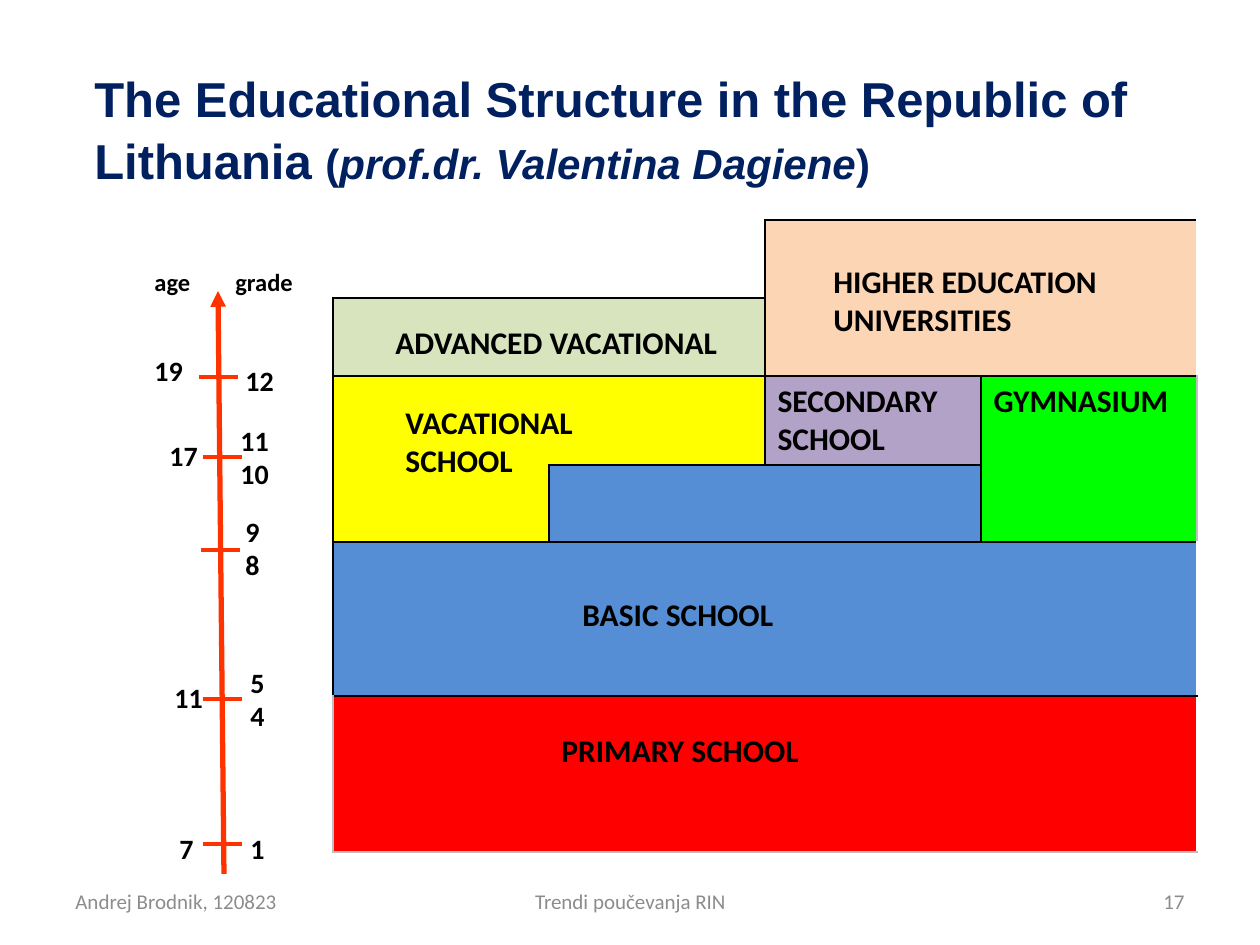
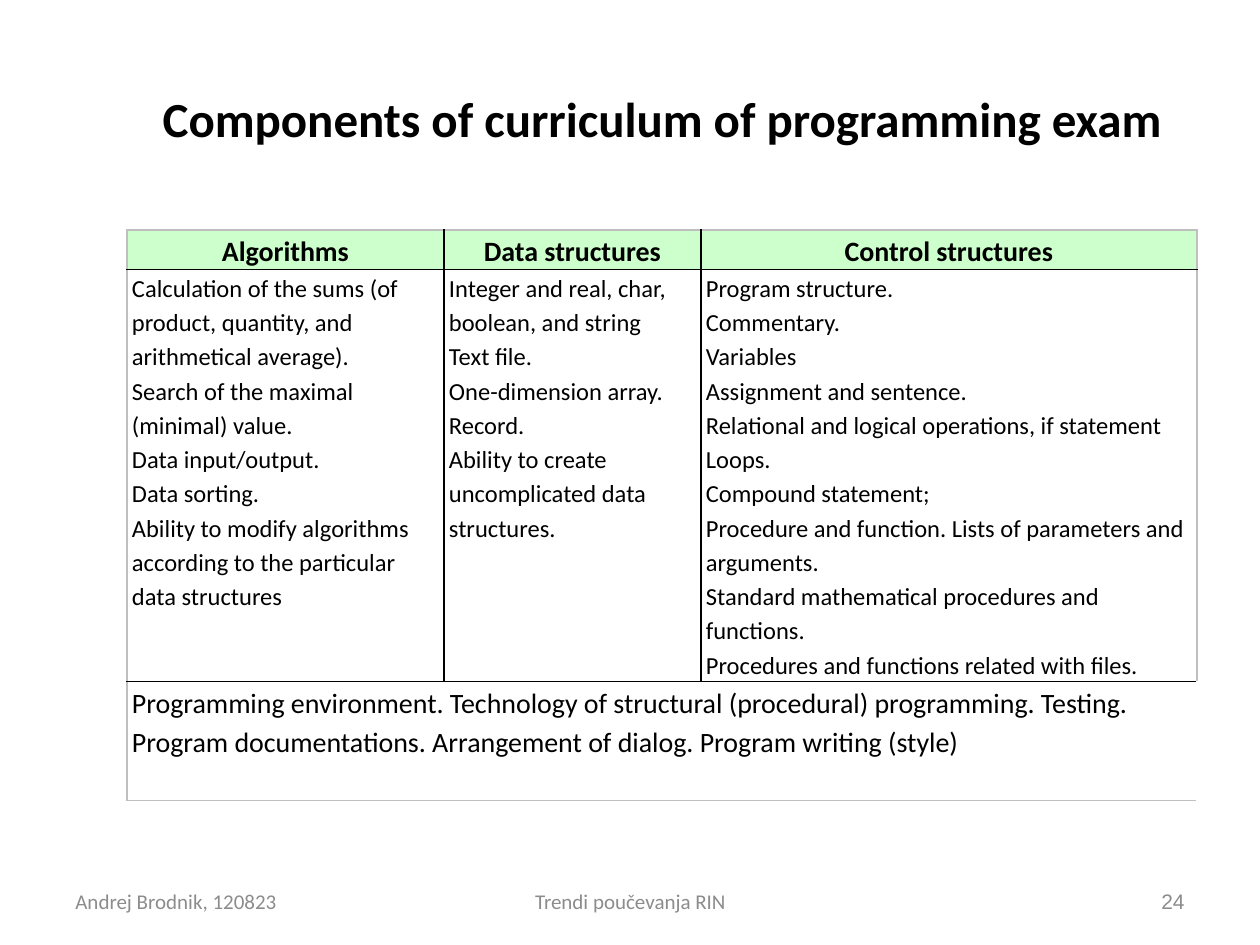
from lxml import etree
from pptx import Presentation
from pptx.dml import color
from pptx.enum import shapes, text
from pptx.oxml import ns
from pptx.util import Emu, Pt

BLACK, NAVY, GREY, EDGE = "000000", "002060", "8C8C8C", "BFBFBF"
AXIS, BLUE, MINT = "FF3300", "558ED5", "CCFFCC"
FONT = "Calibri"
LEFT, MID, RIGHT = text.PP_ALIGN.LEFT, text.PP_ALIGN.CENTER, text.PP_ALIGN.RIGHT
TOP, CENTRE = text.MSO_ANCHOR.TOP, text.MSO_ANCHOR.MIDDLE


def px(count):
    return Emu(round(count * 914400 / 126))


def rgb(code):
    return color.RGBColor.from_string(code)


def style(run, size, bold=False, ink=BLACK, font=FONT, slant=False):
    run.font.size, run.font.name = Pt(size), font
    run.font.bold, run.font.italic = bold, slant
    run.font.color.rgb = rgb(ink)


def write(frame, lines, size, align=LEFT, space=None, **look):
    frame.text = "\n".join(lines)
    for para in frame.paragraphs:
        para.alignment = align
        para.line_spacing = space
        for run in para.runs:
            style(run, size, **look)


def label(slide, box, lines, size, wrap=True, anchor=TOP, **look):
    frame = slide.shapes.add_textbox(*map(px, box)).text_frame
    frame.word_wrap = wrap
    frame.vertical_anchor = anchor
    write(frame, lines, size, **look)
    return frame


def line(slide, start, end, width, arrow=False):
    link = slide.shapes.add_connector(
        shapes.MSO_CONNECTOR.STRAIGHT, *map(px, start + end))
    link.line.color.rgb = rgb(AXIS)
    link.line.width = Pt(width)
    if arrow:
        etree.SubElement(link.line._get_or_add_ln(), ns.qn("a:tailEnd"),
                         type="triangle")
    etree.SubElement(link._element.spPr, ns.qn("a:effectLst"))


def border(cell, sides):
    """Draw the sides (L, R, T, B mapped to a colour, or None for no line)."""
    props = cell._tc.get_or_add_tcPr()
    for spot, side in enumerate(s for s in "LRTB" if s in sides):
        edge = etree.Element(ns.qn(f"a:ln{side}"), w=str(Pt(1)))
        if sides[side]:
            fill = etree.SubElement(edge, ns.qn("a:solidFill"))
            etree.SubElement(fill, ns.qn("a:srgbClr"), val=sides[side])
        else:
            etree.SubElement(edge, ns.qn("a:noFill"))
        props.insert(spot, edge)


def grid(slide, spot, cols, rows):
    box = (*spot, sum(cols), sum(rows))
    table = slide.shapes.add_table(
        len(rows), len(cols), *map(px, box)).table
    table.first_row = table.horz_banding = False
    for col, width in zip(table.columns, cols):
        col.width = px(width)
    for row, height in zip(table.rows, rows):
        row.height = px(height)
    return table


def block(table, row, col, high=1, wide=1, fill=None, **edges):
    """Merge an area, fill it and outline it; black unless edges says else."""
    sides = {**dict.fromkeys("LRTB", BLACK), **edges}
    last, end = row + high - 1, col + wide - 1
    first = table.cell(row, col)
    if high * wide > 1:
        first.merge(table.cell(last, end))
    for r in range(row, last + 1):
        for c in range(col, end + 1):
            cell = table.cell(r, c)
            if fill:
                cell.fill.solid()
                cell.fill.fore_color.rgb = rgb(fill)
            else:
                cell.fill.background()
            outer = {"L": c == col, "R": c == end,
                     "T": r == row, "B": r == last}
            border(cell, {s: sides[s] for s in sides if outer[s]})
    return first


def footer(slide, number, font=FONT):
    parts = ((63, 294, "Andrej Brodnik, 120823", LEFT, FONT),
             (431, 399, "Trendi poučevanja RIN", MID, FONT),
             (903, 294, number, RIGHT, font))
    for left, width, words, align, face in parts:
        label(slide, (left, 876, width, 50), [words], 12, anchor=CENTRE,
              align=align, ink=GREY, font=face)


def levels(slide):
    """Table of school levels, with the names laid over it."""
    table = grid(slide, (333, 220), [216] * 4, [78, 78, 89, 77, 154, 156])
    block(table, 0, 0, wide=2, L=None, T=None)
    block(table, 0, 2, 2, 2, "FCD5B5")
    block(table, 1, 0, wide=2, fill="D7E4BD")
    block(table, 2, 0, 2, fill="FFFF00", R=None)
    block(table, 2, 1, fill="FFFF00", L=None)
    second = block(table, 2, 2, fill="B3A2C7")
    gym = block(table, 2, 3, 2, fill="00FF00", R=EDGE)
    block(table, 3, 1, wide=2, fill=BLUE)
    block(table, 4, 0, wide=4, fill=BLUE)
    block(table, 5, 0, wide=4, fill="FF0000", L=EDGE, R=EDGE, B=EDGE)
    write(second.text_frame, ["SECONDARY SCHOOL"], 18, bold=True)
    write(gym.text_frame, ["GYMNASIUM"], 18, bold=True)
    names = (((549, 725, 432, 64), ["PRIMARY SCHOOL"]),
             ((570, 589, 475, 64), ["BASIC SCHOOL"]),
             ((393, 397, 257, 89), ["VACATIONAL SCHOOL"]),
             ((383, 317, 392, 50), ["ADVANCED VACATIONAL"]),
             ((821, 256, 300, 101), ["HIGHER EDUCATION", "UNIVERSITIES"]))
    for box, lines in names:
        label(slide, box, lines, 18, bold=True)


def scale(slide):
    """Upright arrow with ages on its left and grades on its right."""
    line(slide, (224, 874), (218, 291), 3, arrow=True)
    for left, top in ((199, 377), (203, 457), (201, 550),
                      (203, 699), (203, 844)):
        line(slide, (left, top), (left + 39, top), 2.25)
    marks = ((142, 347, ["19"]), (157, 432, ["17"]), (162, 674, ["11"]),
             (167, 825, ["7"]), (233, 357, ["12"]), (228, 417, ["11", "10"]),
             (233, 508, ["9", "8"]), (238, 659, ["5", "4"]),
             (238, 825, ["1"]))
    for left, top, lines in marks:
        wide = 57 if len(lines[0]) > 1 else 42
        label(slide, (left, top, wide, 13 + 34 * len(lines)), lines, 16,
              wrap=False, bold=True)
    for left, width, word in ((142, 68, "age"), (223, 92, "grade")):
        label(slide, (left, 261, width, 43), [word], 14, wrap=False,
              bold=True)


def schools(slide):
    look = {"bold": True, "ink": NAVY, "font": "Arial"}
    title = label(slide, (82, 60, 1115, 135),
                  ["The Educational Structure in the Republic of Lithuania "],
                  28, anchor=CENTRE, space=1.05, **look)
    for words, slant in (("(", False), ("prof.dr. Valentina Dagiene", True),
                         (")", False)):
        run = title.paragraphs[0].add_run()
        run.text = words
        style(run, 24, slant=slant, **look)
    levels(slide)
    scale(slide)
    footer(slide, "17")


TOPICS = {
    "Algorithms": [
        "Calculation of the sums (of product, quantity, and arithmetical "
        "average).",
        "Search of the maximal (minimal) value.",
        "Data input/output.",
        "Data sorting.",
        "Ability to modify algorithms according to the particular data "
        "structures"],
    "Data structures": [
        "Integer and real, char, boolean, and string",
        "Text file.",
        "One-dimension array.",
        "Record.",
        "Ability to create uncomplicated data structures."],
    "Control structures": [
        "Program structure.",
        "Commentary.",
        "Variables",
        "Assignment and sentence.",
        "Relational and logical operations, if statement",
        "Loops.",
        "Compound statement;",
        "Procedure and function. Lists of parameters and arguments.",
        "Standard mathematical procedures and functions.",
        "Procedures and functions related with files."],
}
SKILLS = ("Programming environment. Technology of structural (procedural) "
          "programming. Testing. Program documentations. Arrangement of "
          "dialog. Program writing (style)")


def fill_cell(cell, lines, size, **look):
    cell.margin_left = cell.margin_right = px(5)
    cell.margin_top = cell.margin_bottom = 0
    write(cell.text_frame, lines, size, space=1.15, **look)


def exam(slide):
    table = grid(slide, (127, 230), [317, 257, 496], [39, 412, 119])
    for col, (head, lines) in enumerate(TOPICS.items()):
        sides = {"L": BLACK if col else EDGE,
                 "R": BLACK if col < len(TOPICS) - 1 else EDGE}
        cell = block(table, 0, col, fill=MINT, T=EDGE, **sides)
        fill_cell(cell, [head], 16, align=MID, bold=True)
        fill_cell(block(table, 1, col, **sides), lines, 14)
    last = block(table, 2, 0, wide=3, L=EDGE, R=EDGE, B=EDGE)
    fill_cell(last, [SKILLS], 16)
    label(slide, (126, 60, 1072, 116),
          ["Components of curriculum of programming exam"], 28,
          anchor=CENTRE, align=MID, bold=True)
    footer(slide, "24", "Arial")


def main():
    deck = Presentation()
    deck.slide_width, deck.slide_height = px(1260), px(945)
    for build in (schools, exam):
        build(deck.slides.add_slide(deck.slide_layouts[6]))
    deck.save("out.pptx")


if __name__ == "__main__":
    main()
